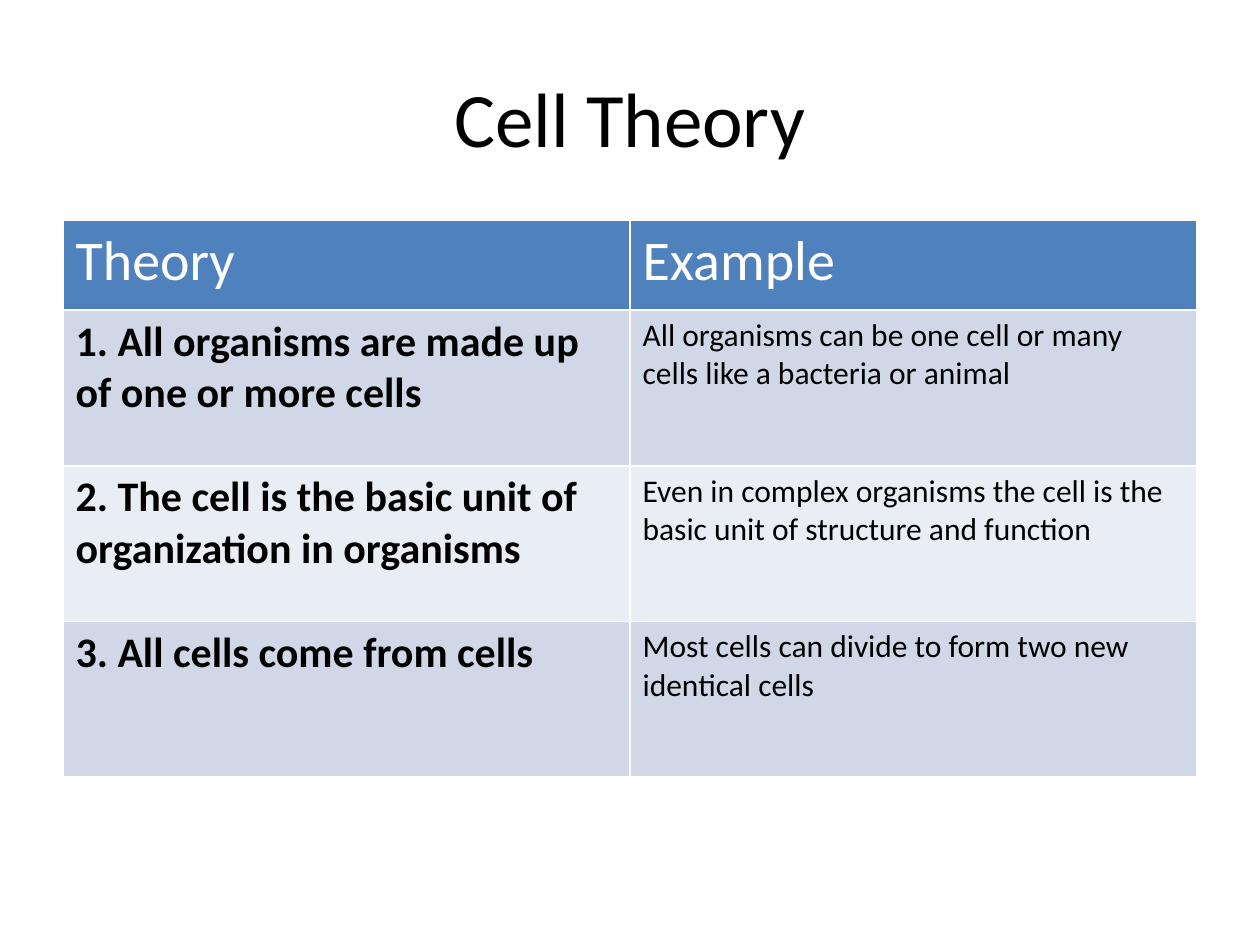
from dataclasses import dataclass

from lxml.etree import SubElement
from pptx import Presentation
from pptx.dml.color import RGBColor
from pptx.enum.shapes import MSO_SHAPE
from pptx.enum.text import MSO_ANCHOR, PP_ALIGN
from pptx.oxml.ns import qn
from pptx.slide import Slide
from pptx.table import _Cell as Cell
from pptx.text.text import TextFrame
from pptx.util import Pt


@dataclass(frozen=True)
class Theme:
    font: str = "Calibri"
    text: str = "000000"
    paper: str = "FFFFFF"
    header: str = "4F81BD"
    bands: tuple[str, str] = ("D0D8E8", "E9EDF4")
    title_size: int = 44
    header_size: int = 32
    theory_size: int = 24
    example_size: int = 18
    line: int = 1


@dataclass(frozen=True)
class TextStyle:
    size: int
    color: str
    bold: bool = False


@dataclass(frozen=True)
class TheoryRow:
    theory: str
    example: str


THEME = Theme()
LEFT, WIDTH = Pt(36), Pt(648)
HEADER_HEIGHT, ROW_HEIGHT = Pt(51.2), Pt(89)
HEADINGS = TheoryRow("Theory", "Example")
ROWS = [
    TheoryRow("1. All organisms are made up of one or more cells",
              "All organisms can be one cell or many cells like a bacteria or animal"),
    TheoryRow("2. The cell is the basic unit of organization in organisms",
              "Even in complex organisms the cell is the basic unit of structure and function"),
    TheoryRow("3. All cells come from cells",
              "Most cells can divide to form two new identical cells"),
]


def write_text(frame: TextFrame, text: str, style: TextStyle) -> None:
    frame.text = text
    font = frame.paragraphs[0].runs[0].font
    font.name = THEME.font
    font.size = Pt(style.size)
    font.bold = style.bold
    font.color.rgb = RGBColor.from_string(style.color)


def set_borders(cell: Cell) -> None:
    """Add the cell's border lines; call before filling, as the schema wants lines first."""
    properties = cell._tc.get_or_add_tcPr()
    for tag in ("a:lnL", "a:lnR", "a:lnT", "a:lnB"):
        line = SubElement(properties, qn(tag), w=str(Pt(THEME.line)))
        fill = SubElement(line, qn("a:solidFill"))
        SubElement(fill, qn("a:srgbClr"), val=THEME.paper)


def fill_cell(cell: Cell, text: str, style: TextStyle, color: str) -> None:
    set_borders(cell)
    cell.fill.solid()
    cell.fill.fore_color.rgb = RGBColor.from_string(color)
    write_text(cell.text_frame, text, style)


def add_title(page: Slide, text: str) -> None:
    box = page.shapes.add_shape(MSO_SHAPE.RECTANGLE, LEFT, Pt(21.6), WIDTH, Pt(90))
    box.shadow.inherit = False
    box.fill.solid()
    box.fill.fore_color.rgb = RGBColor.from_string(THEME.paper)
    box.line.fill.background()
    frame = box.text_frame
    frame.word_wrap = True
    frame.vertical_anchor = MSO_ANCHOR.MIDDLE
    write_text(frame, text, TextStyle(THEME.title_size, THEME.text))
    frame.paragraphs[0].alignment = PP_ALIGN.CENTER


def add_theory_table(page: Slide) -> None:
    height = HEADER_HEIGHT + len(ROWS) * ROW_HEIGHT
    table = page.shapes.add_table(len(ROWS) + 1, 2, LEFT, Pt(126), WIDTH, height).table
    heading_style = TextStyle(THEME.header_size, THEME.paper)
    theory_style = TextStyle(THEME.theory_size, THEME.text, bold=True)
    example_style = TextStyle(THEME.example_size, THEME.text)

    table.rows[0].height = HEADER_HEIGHT
    for column, heading in enumerate((HEADINGS.theory, HEADINGS.example)):
        fill_cell(table.cell(0, column), heading, heading_style, THEME.header)
    for index, row in enumerate(ROWS):
        table.rows[index + 1].height = ROW_HEIGHT
        band = THEME.bands[index % 2]
        fill_cell(table.cell(index + 1, 0), row.theory, theory_style, band)
        fill_cell(table.cell(index + 1, 1), row.example, example_style, band)


def main() -> None:
    deck = Presentation()
    deck.slide_width, deck.slide_height = Pt(720), Pt(540)
    page = deck.slides.add_slide(deck.slide_layouts[6])
    add_title(page, "Cell Theory")
    add_theory_table(page)
    deck.save("out.pptx")


if __name__ == "__main__":
    main()
